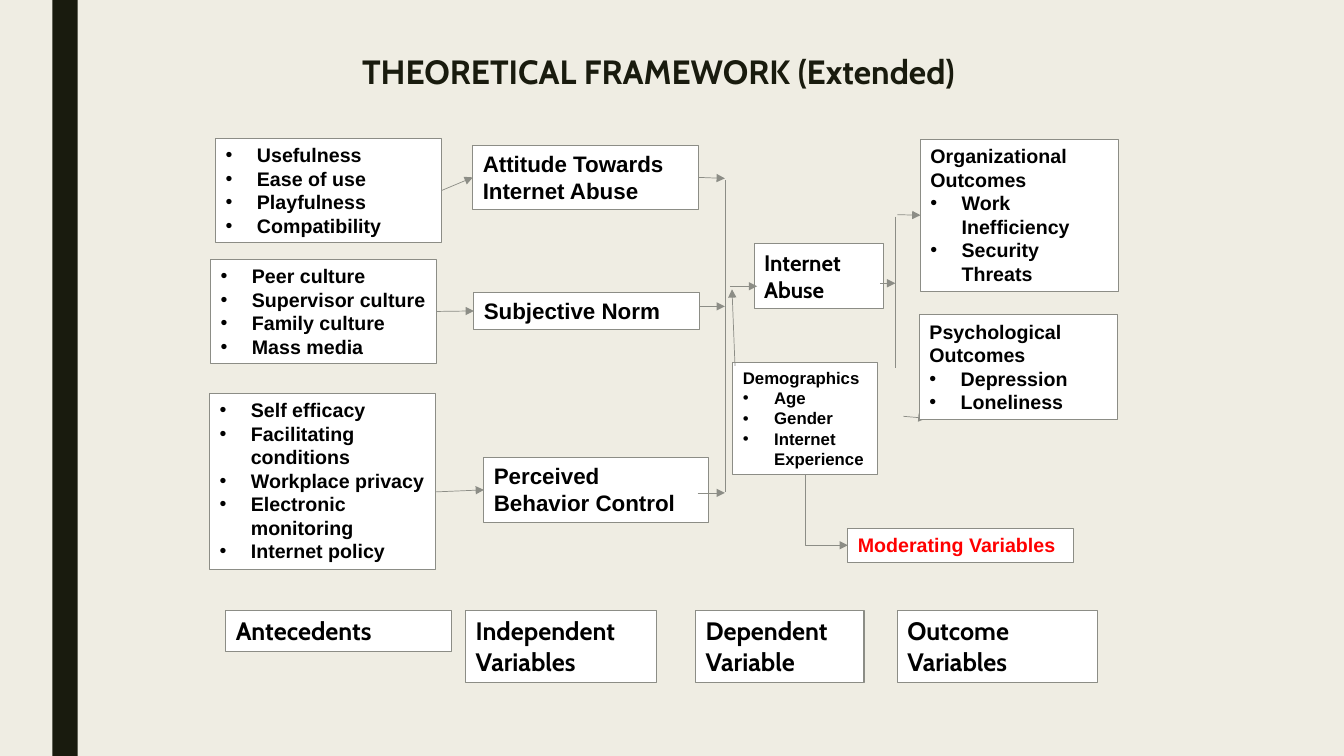
import pptx
import pptx.util
import pptx.dml.color
import pptx.enum.shapes
import pptx.enum.text
import pptx.oxml.ns
import lxml.etree

Inches, Pt = pptx.util.Inches, pptx.util.Pt
RGBColor = pptx.dml.color.RGBColor
SHAPE = pptx.enum.shapes.MSO_SHAPE
CONNECTOR = pptx.enum.shapes.MSO_CONNECTOR
TEXT = pptx.enum.text
qn = pptx.oxml.ns.qn

CREAM = RGBColor(0xEF, 0xED, 0xE3)
INK = RGBColor(0x19, 0x1B, 0x0E)
GREY = RGBColor(0x8C, 0x8D, 0x86)
WHITE = RGBColor(0xFF, 0xFF, 0xFF)
BLACK = RGBColor(0, 0, 0)
RED = RGBColor(0xFF, 0, 0)

# Columns of the diagram, in inches
ANTECEDENT_W = 2.24
TRUNK_X = 7.19
BRANCH_X = 8.88
OUTCOME_X, OUTCOME_W = 9.13, 1.96
LEGEND_Y = 6.06
TWO_LINES = 0.64

deck = pptx.Presentation()
deck.slide_width, deck.slide_height = Inches(13.33), Inches(7.5)
slide = deck.slides.add_slide(deck.slide_layouts[5])
slide.background.fill.solid()
slide.background.fill.fore_color.rgb = CREAM


def add_box(left, top, width, height, lines, size, face="Arial", color=BLACK):
    """Draw a bordered box; lines that start with a bullet are indented."""
    box = slide.shapes.add_shape(SHAPE.RECTANGLE, *map(Inches, (left, top, width, height)))
    box.shadow.inherit = False
    box.fill.solid()
    box.fill.fore_color.rgb = WHITE
    box.line.color.rgb = GREY
    box.line.width = Pt(0.75)
    frame = box.text_frame
    frame.word_wrap = True
    frame.auto_size = TEXT.MSO_AUTO_SIZE.SHAPE_TO_FIT_TEXT
    frame.vertical_anchor = TEXT.MSO_ANCHOR.TOP
    for number, line in enumerate(lines):
        paragraph = frame.add_paragraph() if number else frame.paragraphs[0]
        paragraph.text = line.removeprefix("•")
        paragraph.alignment = TEXT.PP_ALIGN.LEFT
        if line.startswith("•"):
            properties = paragraph._p.get_or_add_pPr()
            properties.set("marL", str(Inches(0.31)))
            properties.set("indent", str(-Inches(0.31)))
            bullet_font = lxml.etree.SubElement(properties, qn("a:buFont"))
            bullet_font.set("typeface", "Arial")
            lxml.etree.SubElement(properties, qn("a:buChar")).set("char", "•")
        paragraph.font.name = face
        paragraph.font.size = Pt(size)
        paragraph.font.bold = True
        paragraph.font.color.rgb = color
    return box


def add_link(start, end, source=None, target=None, arrow=True, kind=CONNECTOR.STRAIGHT):
    """Draw a line from start to end, joined to the (box, side) pairs given."""
    link = slide.shapes.add_connector(kind, *map(Inches, start + end))
    link.line.color.rgb = GREY
    link.line.width = Pt(0.5)
    if arrow:
        lxml.etree.SubElement(link.line._get_or_add_ln(), qn("a:tailEnd")).set("type", "triangle")
    lxml.etree.SubElement(link._element.spPr, qn("a:effectLst"))
    if source:
        link.begin_connect(*source)
    if target:
        link.end_connect(*target)
    return link


# Side bar
bar = slide.shapes.add_shape(SHAPE.RECTANGLE, Inches(0.52), 0, Inches(0.25), deck.slide_height)
bar.shadow.inherit = False
bar.fill.solid()
bar.fill.fore_color.rgb = INK
bar.line.fill.background()

# Title
title = slide.shapes.title
title.left, title.top, title.width, title.height = map(Inches, (2.09, 0.49, 8.88, 0.48))
title.text_frame.text = "THEORETICAL FRAMEWORK (Extended)"
title.text_frame.vertical_anchor = TEXT.MSO_ANCHOR.MIDDLE
heading = title.text_frame.paragraphs[0]
heading.alignment = TEXT.PP_ALIGN.CENTER
heading.line_spacing = 0.89
heading.font.name = "Cabin"
heading.font.size = Pt(24)
heading.font.bold = True
heading.font.color.rgb = INK

# Line to the psychological outcomes, partly behind their box
add_link((8.96, 4.13), (9.19, 4.15))

# Antecedents
usefulness = add_box(2.14, 1.37, ANTECEDENT_W, 1.04,
                     ["•Usefulness", "•Ease of use", "•Playfulness", "•Compatibility"], 14)
culture = add_box(2.09, 2.57, ANTECEDENT_W, 1.04,
                  ["•Peer culture", "•Supervisor culture", "•Family culture", "•Mass media"], 14)
control_factors = add_box(2.08, 3.9, ANTECEDENT_W, 1.75,
                          ["•Self efficacy", "•Facilitating conditions", "•Workplace privacy",
                           "•Electronic monitoring", "•Internet policy"], 14)

# Independent variables
attitude = add_box(4.69, 1.44, 2.24, TWO_LINES, ["Attitude Towards Internet Abuse"], 16)
norm = add_box(4.7, 2.9, 2.24, 0.37, ["Subjective Norm"], 16)
control = add_box(4.8, 4.54, 2.23, TWO_LINES, ["Perceived Behavior Control"], 16)

# Dependent variable, outcomes and moderators
add_box(7.48, 2.42, 1.28, TWO_LINES, ["Internet Abuse"], 16, "Cabin")
organization = add_box(OUTCOME_X, 1.38, OUTCOME_W, 1.51,
                       ["Organizational Outcomes", "•Work Inefficiency", "•Security Threats"], 14)
add_box(OUTCOME_X - 0.01, 3.12, OUTCOME_W, 1.04,
        ["Psychological Outcomes", "•Depression", "•Loneliness"], 14)
demographics = add_box(7.27, 3.6, 1.43, 1.11,
                       ["Demographics", "•Age", "•Gender", "•Internet Experience"], 12)
moderating = add_box(8.41, 5.24, 2.24, 0.34, ["Moderating Variables"], 14, color=RED)

# Column legend
for left, width, height, lines in [
    (2.24, ANTECEDENT_W, 0.4, ["Antecedents"]),
    (4.62, 1.89, 0.71, ["Independent Variables"]),
    (6.9, 1.67, 0.71, ["Dependent Variable"]),
    (8.9, 1.99, 0.71, ["Outcome", "Variables"]),
]:
    add_box(left, LEGEND_Y, width, height, lines, 18, "Cabin")

# Antecedents to independent variables
add_link((4.38, 1.89), (4.69, 1.76), (usefulness, 3), (attitude, 1))
add_link((4.33, 3.09), (4.7, 3.08), (culture, 3), (norm, 1))
add_link((4.32, 4.88), (4.8, 4.86), target=(control, 1))

# Independent variables to the trunk, and on to the dependent variable
add_link((TRUNK_X, 4.88), (TRUNK_X, 1.79), arrow=False)
add_link((6.93, 1.77), (TRUNK_X, 1.77), (attitude, 3))
add_link((6.94, 3.04), (TRUNK_X, 3.04))
add_link((6.92, 4.89), (TRUNK_X, 4.89))
add_link((7.24, 2.84), (7.51, 2.84))
add_link((7.29, 3.63), (7.26, 2.87))

# Dependent variable to outcomes
add_link((8.73, 2.81), (BRANCH_X, 2.81))
add_link((BRANCH_X, 2.15), (BRANCH_X, 3.65), arrow=False)
add_link((8.9, 2.13), (OUTCOME_X, 2.13), target=(organization, 1))

# Demographics down and right to the moderating label: one bend, a quarter turn
elbow = add_link((7.99, 4.71), (8.41, 5.41), (demographics, 2), (moderating, 1),
                 kind=CONNECTOR.ELBOW)
across, down = elbow.width, elbow.height
elbow.left += (across - down) // 2
elbow.top += (down - across) // 2
elbow.width, elbow.height = down, across
outline = elbow._element.spPr
outline.find(qn("a:prstGeom")).set("prst", "bentConnector2")
outline.find(qn("a:xfrm")).set("rot", str(270 * 60000))
outline.find(qn("a:xfrm")).set("flipH", "1")

deck.save("out.pptx")
